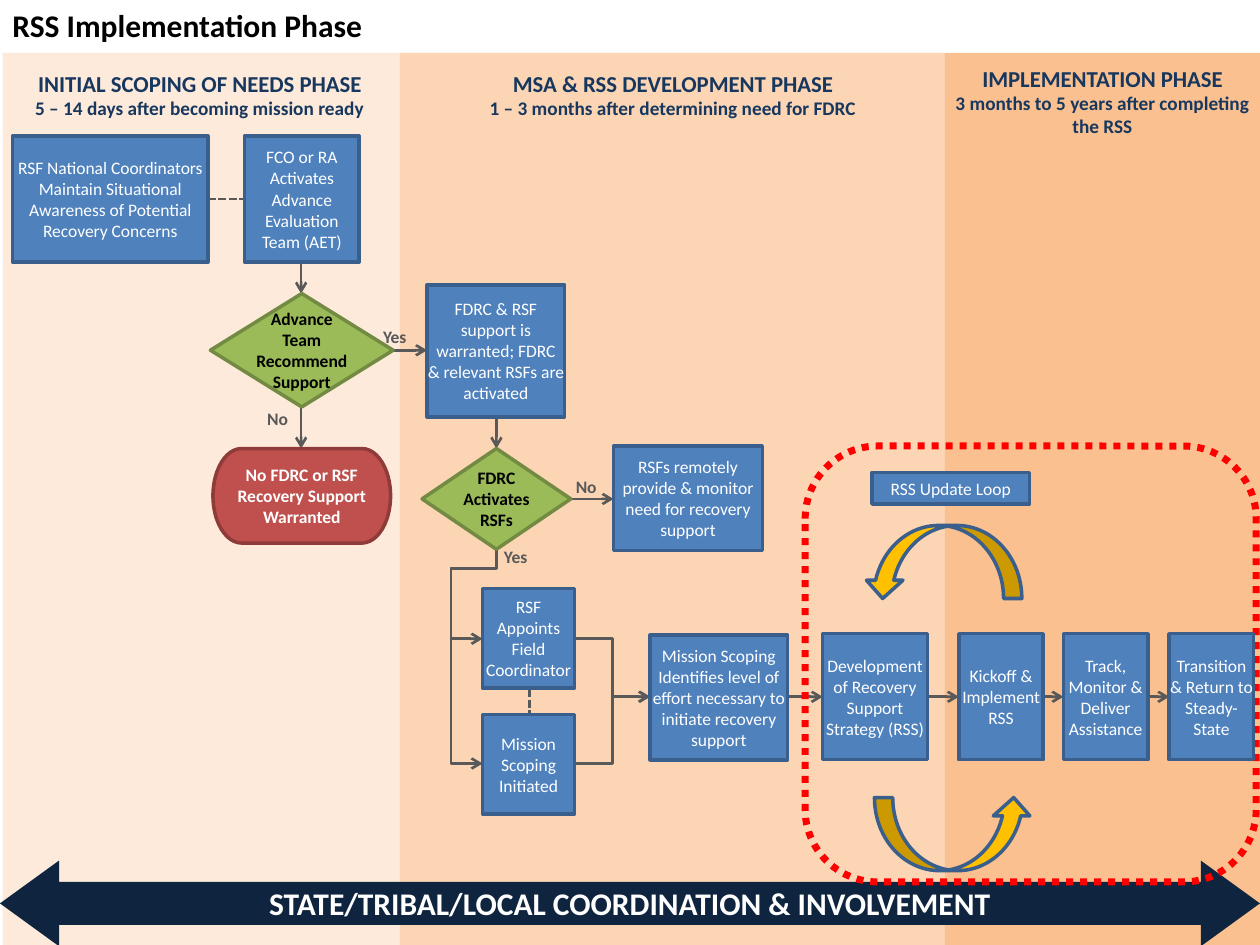
from dataclasses import dataclass

import pptx
import pptx.dml.color
import pptx.enum.dml
import pptx.enum.shapes
import pptx.enum.text
import pptx.oxml
import pptx.oxml.ns
import pptx.util
from pptx.util import Inches

SHAPE = pptx.enum.shapes.MSO_SHAPE
CONNECTOR = pptx.enum.shapes.MSO_CONNECTOR
DASH = pptx.enum.dml.MSO_LINE
ALIGN = pptx.enum.text.PP_ALIGN
ANCHOR = pptx.enum.text.MSO_ANCHOR
AUTO_SIZE = pptx.enum.text.MSO_AUTO_SIZE
Point = tuple[float, float]
Box = tuple[float, float, float, float]  # left, top, width, height

COLORS = {
    "scoping": "FDEADA", "development": "FCD5B5", "implementation": "FAC090",
    "process": "4F81BD", "process line": "3A5F8C",
    "decision": "9BBB59", "decision line": "738A42",
    "stop": "C0504D", "stop line": "8E3B39",
    "loop": "FFC000", "highlight": "FF0000", "banner": "0F243E",
    "heading": "17375E", "connector": "595959",
    "white": "FFFFFF", "black": "000000",
}


@dataclass
class Style:
    shape: pptx.enum.shapes.MSO_SHAPE
    fill: str
    text: str = "white"
    bold: bool = False
    insets: Point = (0, 0)


@dataclass
class Node:
    style: Style
    box: Box
    text: str


@dataclass
class Phase:
    color: str
    left: float
    width: float
    heading_box: Box
    insets: Point
    heading: str
    timing: str


PROCESS = Style(SHAPE.FLOWCHART_PROCESS, "process")
PLAIN = Style(SHAPE.RECTANGLE, "process")
DECISION = Style(SHAPE.FLOWCHART_DECISION, "decision", "black", True)
STOP = Style(SHAPE.FLOWCHART_TERMINATOR, "stop", bold=True, insets=(0.1, 0.05))

PHASES = [
    Phase("development", 3.17, 4.33, (3.68, 0.51, 3.32, 0.51), (0.09, 0.04),
          "MSA & RSS DEVELOPMENT PHASE", "1 – 3 months after determining need for FDRC"),
    Phase("implementation", 7.5, 2.5, (7.5, 0.51, 2.5, 0.59), (0, 0),
          "IMPLEMENTATION PHASE", "3 months to 5 years after completing the RSS"),
    Phase("scoping", 0.02, 3.15, (0, 0.51, 3.17, 0.49), (0.09, 0.04),
          "INITIAL SCOPING OF NEEDS PHASE", "5 – 14 days after becoming mission ready"),
]

NODES = [
    Node(PROCESS, (0.1, 1.08, 1.55, 1),
         "RSF National Coordinators Maintain Situational Awareness of Potential Recovery Concerns"),
    Node(PROCESS, (1.94, 1.08, 0.91, 1), "FCO or RA Activates Advance Evaluation Team (AET)"),
    Node(DECISION, (1.67, 2.33, 1.45, 0.9), "Advance Team Recommend Support"),
    Node(STOP, (1.69, 3.56, 1.41, 0.75), "No FDRC or RSF Recovery Support Warranted"),
    Node(PROCESS, (3.39, 2.26, 1.09, 1.05),
         "FDRC & RSF support is warranted; FDRC\n& relevant RSFs are activated"),
    Node(DECISION, (3.35, 3.56, 1.18, 0.8), "FDRC Activates RSFs"),
    Node(PROCESS, (4.87, 3.54, 1.18, 0.83),
         "RSFs remotely provide & monitor need for recovery support"),
    Node(PROCESS, (3.83, 4.67, 0.73, 0.79), "RSF Appoints Field Coordinator"),
    Node(PROCESS, (3.83, 5.67, 0.73, 0.79), "Mission Scoping Initiated"),
    Node(PLAIN, (5.16, 5.04, 1.09, 0.99),
         "Mission Scoping Identifies level of effort necessary to initiate recovery support"),
    Node(PROCESS, (6.53, 5.03, 0.83, 1), "Development of Recovery Support Strategy (RSS)"),
    Node(PROCESS, (7.61, 5.03, 0.67, 1), "Kickoff & Implement RSS"),
    Node(PROCESS, (8.44, 5.03, 0.67, 1), "Track, Monitor & Deliver Assistance"),
    Node(PROCESS, (9.28, 5.03, 0.67, 1), "Transition & Return to Steady-State"),
    Node(PROCESS, (6.92, 3.75, 1.25, 0.25), "RSS Update Loop"),
]

ARROWS = [
    ((2.39, 2.08), (2.39, 2.33)), ((2.39, 3.23), (2.39, 3.56)),
    ((3.12, 2.78), (3.39, 2.78)), ((3.94, 3.31), (3.94, 3.56)),
    ((4.53, 3.96), (4.87, 3.96)), ((6.25, 5.53), (6.53, 5.53)),
    ((7.36, 5.53), (7.61, 5.53)), ((8.28, 5.53), (8.44, 5.53)),
    ((9.11, 5.53), (9.28, 5.53)),
]
DASHED_LINKS = [((1.65, 1.58), (1.94, 1.58)), ((4.2, 5.47), (4.2, 5.67))]
ANSWERS = [("Yes", 3.04, 2.59), ("No", 2.12, 3.24), ("Yes", 4, 4.33), ("No", 4.57, 3.78)]


def rgb(name: str) -> pptx.dml.color.RGBColor:
    return pptx.dml.color.RGBColor.from_string(COLORS[name])


def write(shape, lines: list[tuple[str, float]], color: str, bold: bool = False,
          align=ALIGN.CENTER, insets: Point = (0, 0), wrap: bool = True) -> None:
    """Write one paragraph per (text, point size) pair."""
    frame = shape.text_frame
    frame.word_wrap = wrap
    frame.margin_left = frame.margin_right = Inches(insets[0])
    frame.margin_top = frame.margin_bottom = Inches(insets[1])
    for index, (text, size) in enumerate(lines):
        paragraph = frame.add_paragraph() if index else frame.paragraphs[0]
        paragraph.text = text
        paragraph.alignment = align
        paragraph.font.name = "Calibri"
        paragraph.font.size = pptx.util.Pt(size)
        paragraph.font.bold = bold
        paragraph.font.color.rgb = rgb(color)


def add_text(slide, box: Box, lines: list[tuple[str, float]], color: str, **options) -> None:
    text_box = slide.shapes.add_textbox(*map(Inches, box))
    write(text_box, lines, color, bold=True, **options)
    text_box.text_frame.auto_size = AUTO_SIZE.SHAPE_TO_FIT_TEXT


def add_block(slide, kind, box: Box, fill: str = "", line: str = "", weight: float = 2):
    shape = slide.shapes.add_shape(kind, *map(Inches, box))
    shape.shadow.inherit = False
    if fill:
        shape.fill.solid()
        shape.fill.fore_color.rgb = rgb(fill)
    else:
        shape.fill.background()
    if line:
        shape.line.color.rgb = rgb(line)
        shape.line.width = pptx.util.Pt(weight)
    else:
        shape.line.fill.background()
    return shape


def add_node(slide, node: Node) -> None:
    style = node.style
    shape = add_block(slide, style.shape, node.box, style.fill, f"{style.fill} line")
    write(shape, [(text, 10) for text in node.text.split("\n")],
          style.text, style.bold, insets=style.insets)
    shape.text_frame.vertical_anchor = ANCHOR.MIDDLE


def add_link(slide, start: Point, end: Point, kind=CONNECTOR.STRAIGHT, dashed: bool = False):
    link = slide.shapes.add_connector(kind, *map(Inches, start + end))
    link.line.color.rgb = rgb("connector")
    link.line.width = pptx.util.Pt(1.5)
    if dashed:
        link.line.dash_style = DASH.SQUARE_DOT
    else:
        tail = pptx.oxml.parse_xml(f'<a:tailEnd {pptx.oxml.ns.nsdecls("a")} type="arrow"/>')
        link.line._get_or_add_ln().append(tail)
    link.element.spPr.append(
        pptx.oxml.parse_xml(f'<a:effectLst {pptx.oxml.ns.nsdecls("a")}/>'))
    return link


def add_detour(slide, start: Point, end: Point, drop: float, reach: float) -> None:
    """Go down by drop, left by reach, down again and back right to end."""
    length, breadth = end[1] - start[1], start[0] - end[0]
    middle_x, middle_y = (start[0] + end[0]) / 2, (start[1] + end[1]) / 2
    link = add_link(slide, (middle_x - length / 2, middle_y - breadth / 2),
                    (middle_x + length / 2, middle_y + breadth / 2), CONNECTOR.ELBOW)
    properties = link.element.spPr
    properties.find(pptx.oxml.ns.qn("a:xfrm")).set("rot", "5400000")
    geometry = properties.find(pptx.oxml.ns.qn("a:prstGeom"))
    geometry.set("prst", "bentConnector4")
    guides = geometry.find(pptx.oxml.ns.qn("a:avLst"))
    for name, ratio in (("adj1", drop / length), ("adj2", reach / breadth)):
        guides.append(pptx.oxml.parse_xml(
            f'<a:gd {pptx.oxml.ns.nsdecls("a")} name="{name}" fmla="val {round(ratio * 100000)}"/>'))


def main() -> None:
    presentation = pptx.Presentation()
    presentation.slide_width, presentation.slide_height = Inches(10), Inches(7.5)
    slide = presentation.slides.add_slide(presentation.slide_layouts[6])

    # Phase bands, headings and title
    for phase in PHASES:
        add_block(slide, SHAPE.RECTANGLE, (phase.left, 0.42, phase.width, 7.08), phase.color)
    for phase in PHASES:
        add_text(slide, phase.heading_box, [(phase.heading, 13), (phase.timing, 11)],
                 "heading", insets=phase.insets)
    add_text(slide, (0, 0, 8.08, 0.4), [("RSS Implementation Phase", 18)], "black",
             align=ALIGN.LEFT, insets=(0.1, 0.05))

    # Links between steps
    for start, end in ARROWS:
        add_link(slide, start, end)
    for start, end in DASHED_LINKS:
        add_link(slide, start, end, dashed=True)
    for middle in (5.07, 6.06):
        add_detour(slide, (3.94, 4.36), (3.83, middle), drop=0.15, reach=0.36)
        add_link(slide, (4.56, middle), (5.16, 5.53), CONNECTOR.ELBOW)

    # Coordination banner
    banner = add_block(slide, SHAPE.LEFT_RIGHT_ARROW, (0, 6.83, 10, 0.68), "banner")
    banner.adjustments[0], banner.adjustments[1] = 0.5, 0.69
    write(banner, [("STATE/TRIBAL/LOCAL COORDINATION & INVOLVEMENT", 18)], "white", True,
          insets=(0.09, 0.04))
    banner.text_frame.vertical_anchor = ANCHOR.MIDDLE

    # Update loop and its dotted outline
    for left, top, rotation in ((6.94, 6.33, 0), (6.86, 4.17, 180)):
        arrow = add_block(slide, SHAPE.CURVED_UP_ARROW, (left, top, 1.25, 0.58),
                          "loop", "process line")
        arrow.rotation = rotation
    outline = add_block(slide, SHAPE.ROUNDED_RECTANGLE, (6.39, 3.54, 3.58, 3.46),
                        line="highlight", weight=4)
    outline.line.dash_style = DASH.ROUND_DOT

    # Steps and answers
    for node in NODES:
        add_node(slide, node)
    for answer, left, top in ANSWERS:
        add_text(slide, (left, top, 0.2, 0.17), [(answer, 10)], "connector",
                 align=ALIGN.LEFT, wrap=False)

    presentation.save("out.pptx")


if __name__ == "__main__":
    main()
